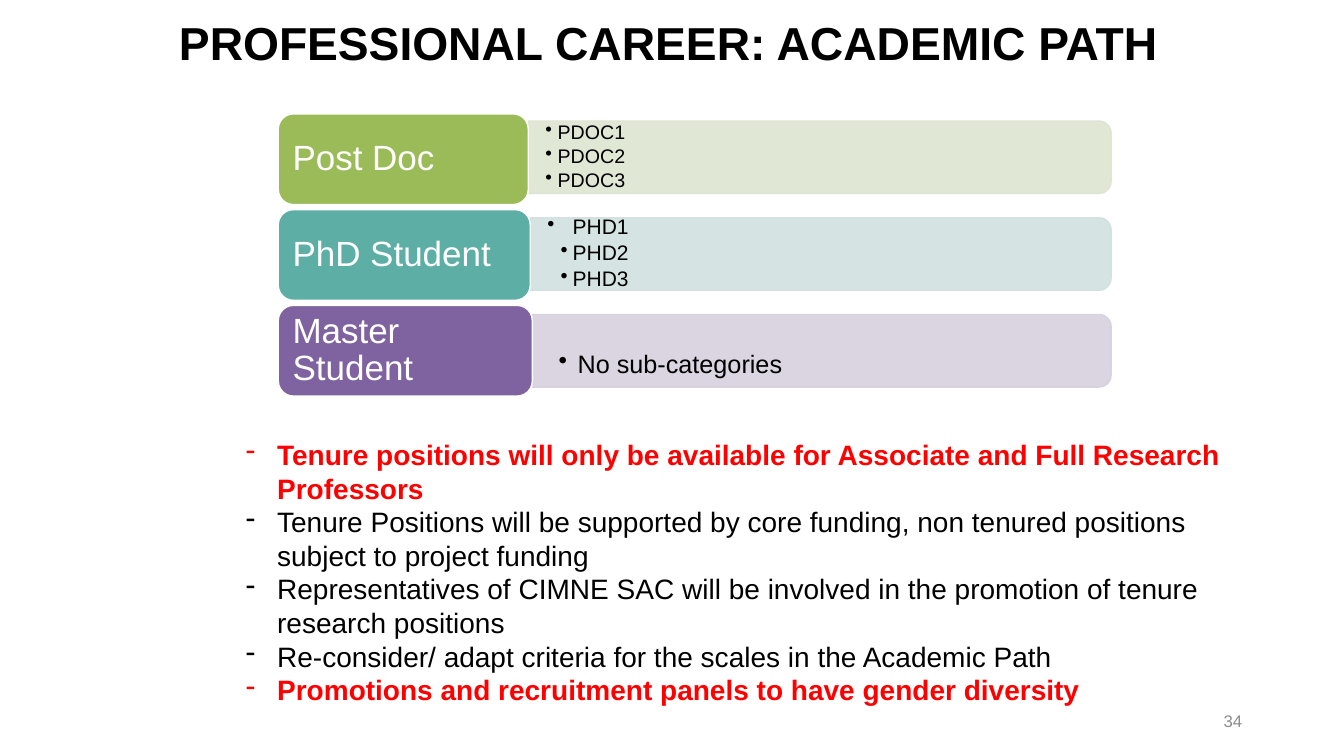
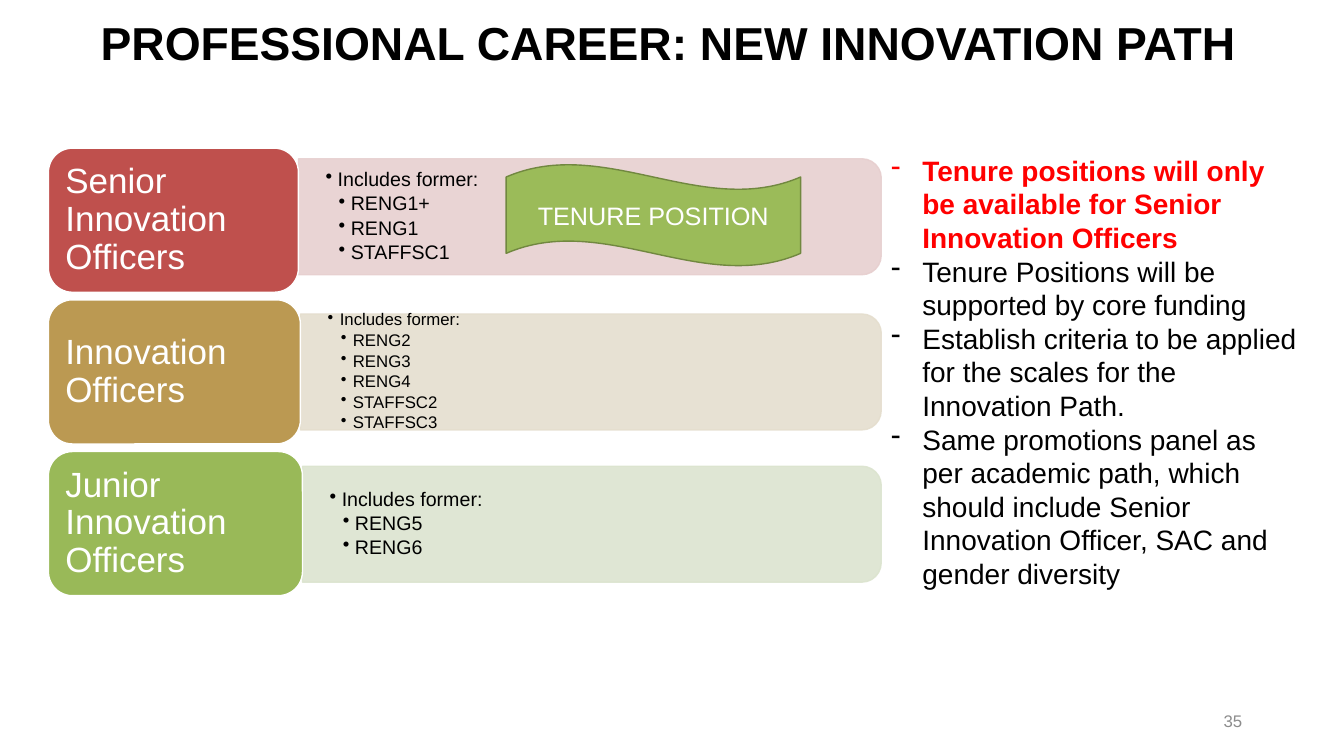
from pptx import Presentation
from pptx.dml.color import RGBColor
from pptx.enum.shapes import MSO_SHAPE as Shape
from pptx.enum.text import MSO_ANCHOR as Anchor, PP_ALIGN as Align
from pptx.oxml.ns import qn
from pptx.util import Inches, Pt
from lxml import etree

COLORS = {
    "black": "000000", "white": "FFFFFF", "red": "FF0000", "gray": "8C8C8C",
    "green": "9BBB59", "pale_green": "DDE5D0", "dark_green": "718840",
    "teal": "5DAEA5", "pale_teal": "D0E1DF",
    "purple": "7F63A1", "pale_purple": "D6D0DE",
    "brick": "BF504D", "pale_brick": "E7CFCF",
    "sand": "BB9952", "pale_sand": "E5DECE",
    "leaf": "99B958", "pale_leaf": "DCE4CF",
}
FONT = "Arial"
TOP_LEVEL = (0.12, 0.12)
SUB_LEVEL = (0.25, 0.12)
WIDE_LEVEL = (0.25, 0.25)
DEEP_LEVEL = (0.38, 0.19)
NOTE_LEVEL = (0.31, 0.31)

SLIDES = [
    {
        "title": "PROFESSIONAL CAREER: ACADEMIC PATH",
        "number": "34",
        "left": 2.76, "top": 1.13, "step": 0.95, "label_height": 0.9,
        "band_height": 0.72, "band_right": 11.02, "inset": 0.17,
        "rows": [
            {"label": "Post Doc", "color": "green", "middle": 1.56, "size": 14,
             "items": [("PDOC1", TOP_LEVEL), ("PDOC2", TOP_LEVEL), ("PDOC3", TOP_LEVEL)]},
            {"label": "PhD Student", "color": "teal", "middle": 2.52, "size": 15,
             "items": [("PHD1", WIDE_LEVEL), ("PHD2", SUB_LEVEL), ("PHD3", SUB_LEVEL)]},
            {"label": "Master Student", "color": "purple", "middle": 3.48, "size": 18,
             "items": [("No sub-categories", DEEP_LEVEL)],
             "anchor": Anchor.BOTTOM, "insets": (0.07, 0.04)},
        ],
        "notes_at": (2.34, 4.29, 10.22, 2.79),
        "notes": [
            ("Tenure positions will only be available for Associate and Full Research Professors", True),
            ("Tenure Positions will be supported by core funding, non tenured positions subject to project funding", False),
            ("Representatives of CIMNE SAC will be involved in the promotion of tenure research positions", False),
            ("Re-consider/ adapt criteria for the scales in the Academic Path", False),
            ("Promotions and recruitment panels to have gender diversity", True),
        ],
    },
    {
        "title": "PROFESSIONAL CAREER: NEW INNOVATION PATH",
        "number": "35",
        "left": 0.48, "top": 1.47, "step": 1.505, "label_height": 1.43,
        "band_height": 1.15, "band_right": 8.74, "inset": 0.27,
        "rows": [
            {"label": "Senior Innovation Officers", "color": "brick", "middle": 2.15, "size": 14,
             "items": [("Includes former:", TOP_LEVEL), ("RENG1+", SUB_LEVEL),
                       ("RENG1", SUB_LEVEL), ("STAFFSC1", SUB_LEVEL)]},
            {"label": "Innovation Officers", "color": "sand", "middle": 3.69, "size": 12,
             "items": [("Includes former:", TOP_LEVEL), ("RENG2", SUB_LEVEL),
                       ("RENG3", SUB_LEVEL), ("RENG4", SUB_LEVEL),
                       ("STAFFSC2", SUB_LEVEL), ("STAFFSC3", SUB_LEVEL)]},
            {"label": "Junior Innovation Officers", "color": "leaf", "middle": 5.2, "size": 14,
             "items": [("Includes former:", TOP_LEVEL), ("RENG5", SUB_LEVEL),
                       ("RENG6", SUB_LEVEL)]},
        ],
        "wave": "TENURE POSITION",
        "notes_at": (8.74, 1.47, 4.23, 4.48),
        "notes": [
            ("Tenure positions will only be available for Senior Innovation Officers", True),
            ("Tenure Positions will be supported by core funding", False),
            ("Establish criteria to be applied for the scales for the Innovation Path.", False),
            ("Same promotions panel as per academic path, which should include Senior "
             "Innovation Officer, SAC and gender diversity", False),
        ],
    },
]


def add_box(page, at, shape=None, fill=None, line=None, anchor=Anchor.TOP, insets=(0.1, 0.05)):
    at = [Inches(length) for length in at]
    if shape is None:
        box = page.shapes.add_textbox(*at)
    else:
        box = page.shapes.add_shape(shape, *at)
        box.shadow.inherit = False
        box.fill.solid()
        box.fill.fore_color.rgb = RGBColor.from_string(COLORS[fill])
        box.line.color.rgb = RGBColor.from_string(COLORS[line])
        box.line.width = Pt(1)
    frame = box.text_frame
    frame.word_wrap = True
    frame.vertical_anchor = anchor
    frame.margin_left = frame.margin_right = Inches(insets[0])
    frame.margin_top = frame.margin_bottom = Inches(insets[1])
    return box


def write(box, text, size=20, color="black", bold=False, align=Align.LEFT,
          spacing=1.0, before=0, bullet=None, level=None):
    frame = box.text_frame
    first = not frame.text
    para = frame.paragraphs[0] if first else frame.add_paragraph()
    if bullet:
        margin, hanging = level
        properties = para._p.get_or_add_pPr()
        properties.set("marL", str(Inches(margin)))
        properties.set("indent", str(-Inches(hanging)))
        etree.SubElement(properties, qn("a:buChar")).set("char", bullet)
    para.alignment = align
    para.line_spacing = spacing
    para.space_before = Pt(0 if first else before)
    span = para.add_run()
    span.text = text
    span.font.name = FONT
    span.font.size = Pt(size)
    span.font.bold = bold
    span.font.color.rgb = RGBColor.from_string(COLORS[color])


deck = Presentation()
deck.slide_width, deck.slide_height = Inches(13.33), Inches(7.5)

for content in SLIDES:
    page = deck.slides.add_slide(deck.slide_layouts[6])
    title = add_box(page, (0.84, 0.15, 11.58, 0.78))
    write(title, content["title"], size=33, bold=True, align=Align.CENTER, spacing=0.9)

    for index, row in enumerate(content["rows"]):
        label_width = 2.48 + 0.02 * index
        band_left = content["left"] + label_width
        band_width = content["band_right"] - band_left
        band_height = content["band_height"]
        pale = "pale_" + row["color"]
        band = add_box(page, (band_left + (band_width - band_height) / 2,
                              row["middle"] - band_width / 2, band_height, band_width),
                       Shape.ROUND_2_SAME_RECTANGLE, pale, pale)
        band.rotation = 90
        for tint in band._element.spPr.iter(qn("a:srgbClr")):
            etree.SubElement(tint, qn("a:alpha")).set("val", "89000")

        text_height = band_height - 0.08
        details = add_box(page, (band_left, row["middle"] - text_height / 2,
                                 band_width - 0.04, text_height),
                          anchor=row.get("anchor", Anchor.MIDDLE),
                          insets=row.get("insets", (content["inset"], content["inset"] / 2)))
        for text, level in row["items"]:
            write(details, text, size=row["size"], spacing=0.9,
                  before=row["size"] * 0.15, bullet="•", level=level)

        label = add_box(page, (content["left"], content["top"] + content["step"] * index,
                               label_width, content["label_height"]),
                        Shape.ROUNDED_RECTANGLE, row["color"], "white", Anchor.MIDDLE)
        write(label, row["label"], size=25, color="white", spacing=0.9)

    if "wave" in content:
        wave = add_box(page, (5.02, 1.63, 2.92, 1.01), Shape.WAVE,
                       "green", "dark_green", Anchor.MIDDLE)
        write(wave, content["wave"], size=18, color="white", align=Align.CENTER)

    notes = add_box(page, content["notes_at"])
    for text, key in content["notes"]:
        write(notes, text, color="red" if key else "black", bold=key,
              bullet="-", level=NOTE_LEVEL)

    number = add_box(page, (9.42, 6.95, 3, 0.4), anchor=Anchor.MIDDLE)
    write(number, content["number"], size=12, color="gray", align=Align.RIGHT)

deck.save("out.pptx")
